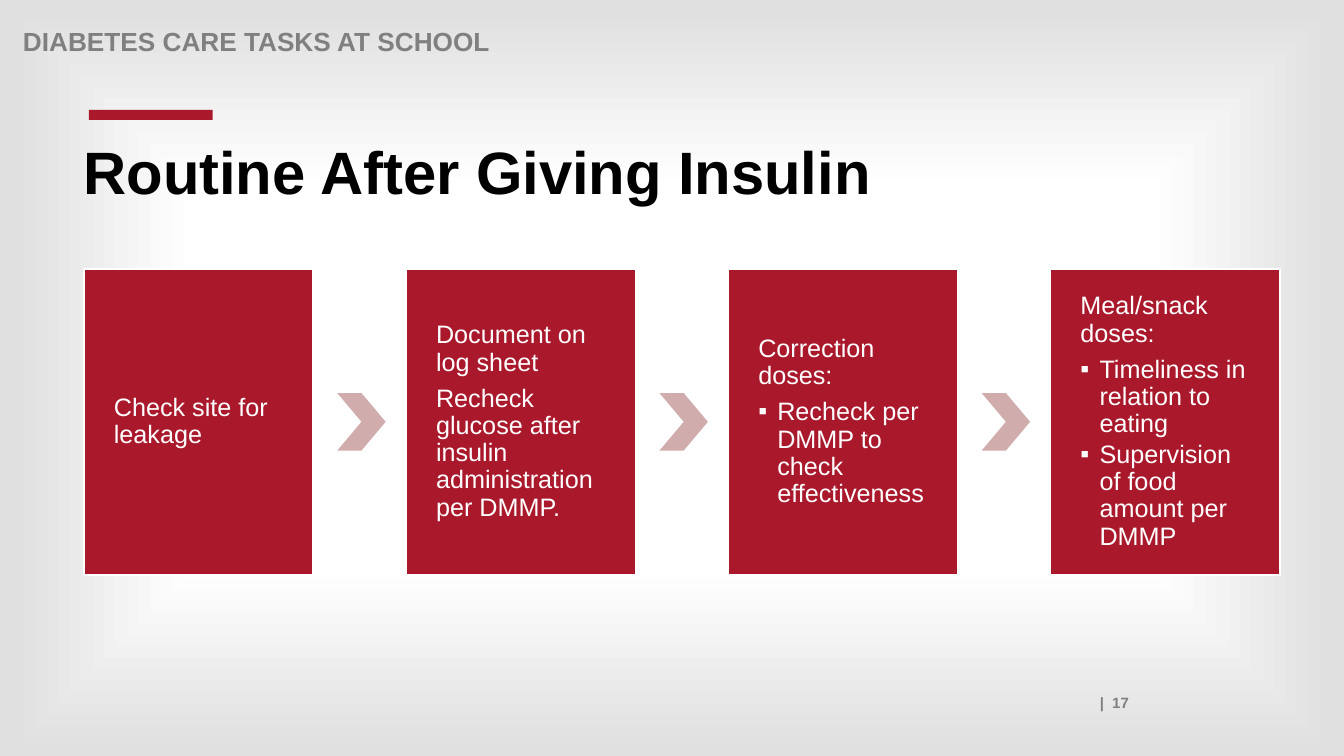
from dataclasses import dataclass

from pptx import Presentation
from pptx.dml.color import RGBColor
from pptx.enum.shapes import MSO_SHAPE
from pptx.enum.text import MSO_ANCHOR, MSO_AUTO_SIZE, PP_ALIGN
from pptx.oxml import parse_xml
from pptx.oxml.ns import nsdecls
from pptx.shapes.autoshape import Shape
from pptx.slide import Slide
from pptx.text.text import TextFrame
from pptx.util import Cm, Pt

CRIMSON, ROSE, WHITE, GREY, BLACK = "AA182C", "D1ACAD", "FFFFFF", "808080", "000000"
CARD_LEFT, CARD_TOP, CARD_WIDTH, CARD_HEIGHT = 2.11, 6.78, 5.79, 7.7
CHEVRON_LEFT, CHEVRON_WIDTH, CHEVRON_HEIGHT = 8.5, 1.22, 1.45
STEP_PITCH = 8.12
BULLET_INDENT = Cm(0.48)


@dataclass(frozen=True)
class Box:
    left: float
    top: float
    width: float
    height: float

    def lengths(self) -> tuple[Cm, Cm, Cm, Cm]:
        return Cm(self.left), Cm(self.top), Cm(self.width), Cm(self.height)


@dataclass(frozen=True)
class Line:
    text: str
    size: float
    color: str
    bold: bool = False
    bullet: bool = False
    after: float = 0
    spacing: float = 0.9
    align: PP_ALIGN = PP_ALIGN.LEFT


@dataclass(frozen=True)
class Step:
    statements: tuple[str, ...]
    bullets: tuple[str, ...] = ()

    def lines(self) -> list[Line]:
        return [Line(text, 18, WHITE, after=6.3) for text in self.statements] + [
            Line(text, 18, WHITE, bullet=True, after=2.7) for text in self.bullets
        ]


STEPS = (
    Step(("Check site for leakage",)),
    Step(("Document on log sheet", "Recheck glucose after insulin administration per DMMP.")),
    Step(("Correction doses:",), ("Recheck per DMMP to check effectiveness",)),
    Step(("Meal/snack doses:",), ("Timeliness in relation to eating", "Supervision of food amount per DMMP")),
)


def rgb(color: str) -> RGBColor:
    return RGBColor.from_string(color)


def apply(target: object, values: dict[str, object]) -> None:
    for attribute, value in values.items():
        setattr(target, attribute, value)


def write(frame: TextFrame, lines: list[Line], anchor: MSO_ANCHOR = MSO_ANCHOR.TOP) -> None:
    apply(frame, {"word_wrap": True, "auto_size": MSO_AUTO_SIZE.NONE, "vertical_anchor": anchor})
    for index, line in enumerate(lines):
        paragraph = frame.add_paragraph() if index else frame.paragraphs[0]
        apply(paragraph, {
            "alignment": line.align,
            "line_spacing": line.spacing,
            "space_before": Pt(0),
            "space_after": Pt(line.after),
            "level": int(line.bullet),
        })
        run = paragraph.add_run()
        run.text = line.text
        apply(run.font, {"name": "Arial", "size": Pt(line.size), "bold": line.bold})
        run.font.color.rgb = rgb(line.color)
        if line.bullet:
            properties = paragraph._p.get_or_add_pPr()
            properties.set("marL", str(BULLET_INDENT))
            properties.set("indent", str(-BULLET_INDENT))
            properties.append(parse_xml(f'<a:buFont {nsdecls("a")} typeface="Arial"/>'))
            properties.append(parse_xml(f'<a:buChar {nsdecls("a")} char="▪"/>'))


def add_label(slide: Slide, box: Box, line: Line) -> None:
    write(slide.shapes.add_textbox(*box.lengths()).text_frame, [line])


def add_block(slide: Slide, preset: MSO_SHAPE, box: Box, color: str) -> Shape:
    block = slide.shapes.add_shape(preset, *box.lengths())
    block.shadow.inherit = False
    block.fill.solid()
    block.fill.fore_color.rgb = rgb(color)
    block.line.fill.background()
    return block


def add_step(slide: Slide, index: int, step: Step) -> None:
    box = Box(CARD_LEFT + index * STEP_PITCH, CARD_TOP, CARD_WIDTH, CARD_HEIGHT)
    card = add_block(slide, MSO_SHAPE.RECTANGLE, box, CRIMSON)
    card.line.color.rgb = rgb(WHITE)
    card.line.width = Pt(1.5)
    apply(card.text_frame, {
        "margin_left": Cm(0.76),
        "margin_right": Cm(0.76),
        "margin_top": Cm(0.18),
        "margin_bottom": Cm(0.18),
    })
    write(card.text_frame, step.lines(), MSO_ANCHOR.MIDDLE)


def add_chevron(slide: Slide, index: int) -> None:
    top = CARD_TOP + (CARD_HEIGHT - CHEVRON_HEIGHT) / 2
    box = Box(CHEVRON_LEFT + index * STEP_PITCH, top, CHEVRON_WIDTH, CHEVRON_HEIGHT)
    add_block(slide, MSO_SHAPE.CHEVRON, box, ROSE)


def paint_background(slide: Slide) -> None:
    stops = "".join(
        f'<a:gs pos="{percent * 1000}"><a:srgbClr val="{color}"/></a:gs>'
        for percent, color in ((12, WHITE), (50, WHITE), (98, "E0E0E0"))
    )
    slide._element.cSld.insert(0, parse_xml(
        f'<p:bg {nsdecls("p", "a")}><p:bgPr><a:gradFill><a:gsLst>{stops}</a:gsLst>'
        '<a:path path="shape"><a:fillToRect l="50000" t="50000" r="50000" b="50000"/></a:path>'
        "</a:gradFill><a:effectLst/></p:bgPr></p:bg>"
    ))


def main() -> None:
    presentation = Presentation()
    apply(presentation, {"slide_width": Cm(33.87), "slide_height": Cm(19.05)})
    slide = presentation.slides.add_slide(presentation.slide_layouts[5])
    paint_background(slide)

    add_label(slide, Box(3.07, 17.35, 25.63, 0.71),
              Line("|  17", 10.7, GREY, bold=True, spacing=1.0, align=PP_ALIGN.RIGHT))
    add_label(slide, Box(0.33, 0.61, 27.94, 0.71),
              Line("DIABETES CARE TASKS AT SCHOOL", 18.7, GREY, bold=True))
    add_block(slide, MSO_SHAPE.RECTANGLE, Box(2.24, 2.77, 3.12, 0.25), CRIMSON)

    title = slide.shapes.title
    apply(title, dict(zip(("left", "top", "width", "height"), Box(1.85, 3.48, 28.02, 2.11).lengths())))
    write(title.text_frame, [Line("Routine After Giving Insulin", 42.7, BLACK, bold=True)])

    for index, step in enumerate(STEPS):
        add_step(slide, index, step)
        if index < len(STEPS) - 1:
            add_chevron(slide, index)

    presentation.save("out.pptx")


if __name__ == "__main__":
    main()
